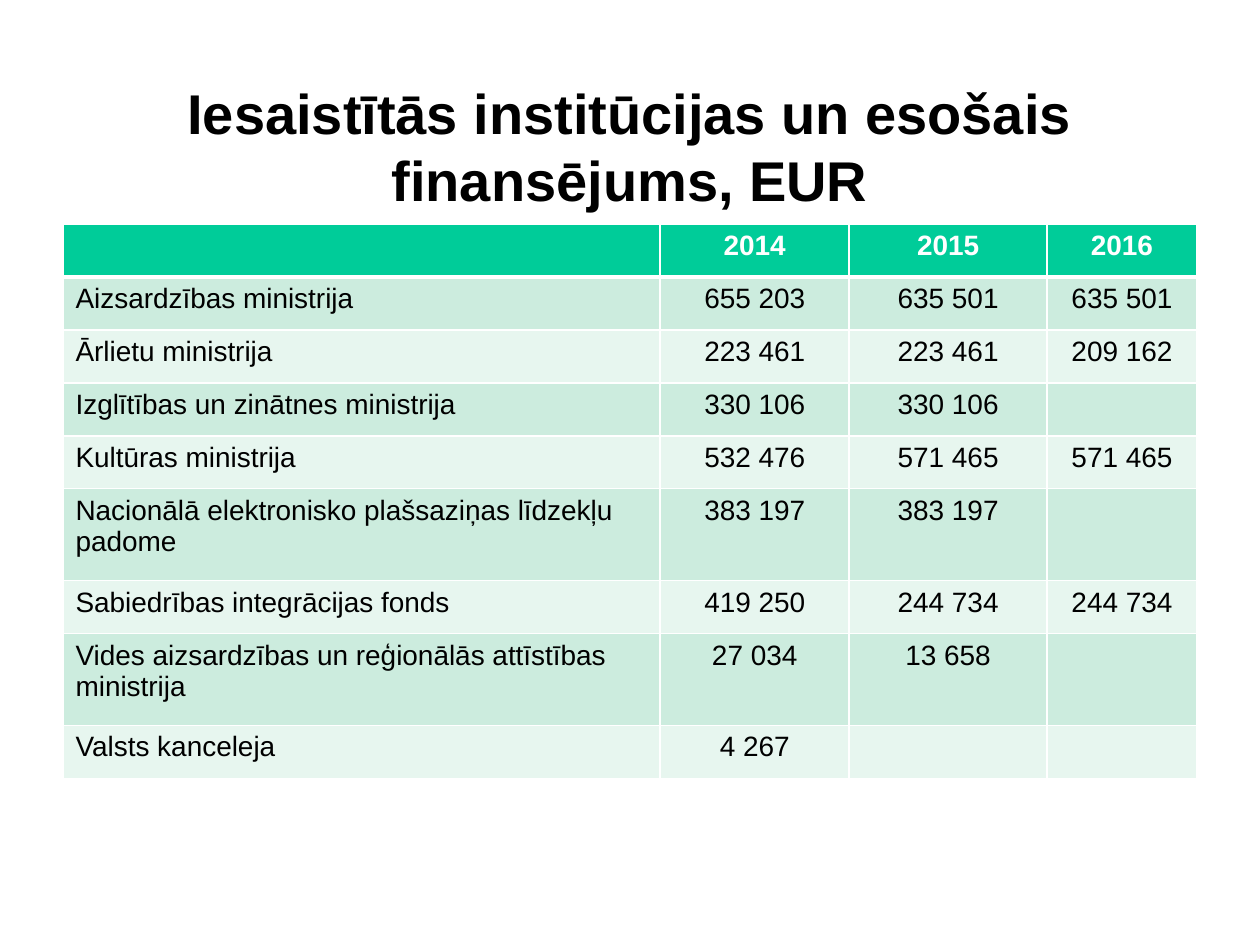
from lxml.etree import SubElement
from pptx import Presentation
from pptx.dml.color import RGBColor
from pptx.enum.text import MSO_ANCHOR, MSO_AUTO_SIZE, PP_ALIGN
from pptx.oxml.ns import qn
from pptx.util import Inches, Pt

TITLE = "Iesaistītās institūcijas un esošais finansējums, EUR"
HEADER = ("", "2014", "2015", "2016")
FUNDING = [
    ("Aizsardzības ministrija", "655 203", "635 501", "635 501"),
    ("Ārlietu ministrija", "223 461", "223 461", "209 162"),
    ("Izglītības un zinātnes ministrija", "330 106", "330 106", ""),
    ("Kultūras ministrija", "532 476", "571 465", "571 465"),
    ("Nacionālā elektronisko plašsaziņas līdzekļu padome", "383 197", "383 197", ""),
    ("Sabiedrības integrācijas fonds", "419 250", "244 734", "244 734"),
    ("Vides aizsardzības un reģionālās attīstības ministrija", "27 034", "13 658", ""),
    ("Valsts kanceleja", "4 267", "", ""),
]

FONT = "Arial"
BLACK, WHITE = "000000", "FFFFFF"
HEADER_FILL, BANDS = "00CC99", ("CCECDE", "E7F6EF")
MARGIN, CONTENT_WIDTH = 0.5, 9
TITLE_TOP, TITLE_HEIGHT, TABLE_TOP = 0.76, 0.79, 1.78
COLUMN_WIDTHS = (4.74, 1.5, 1.57, 1.19)
ROW_HEIGHT, TALL_ROW_HEIGHT = 0.42, 0.73
LONGEST_ONE_LINE_NAME = 40


def format_text(frame, size, color, bold, align):
    for paragraph in frame.paragraphs:
        paragraph.alignment = align
        for run in paragraph.runs:
            font = run.font
            font.name, font.size, font.bold = FONT, Pt(size), bold
            font.color.rgb = RGBColor.from_string(color)


def add_borders(cell, widths):
    """Draw white borders; widths are points for left, right, top, bottom."""
    properties = cell._tc.get_or_add_tcPr()
    for side, width in zip("LRTB", widths):
        line = SubElement(properties, qn(f"a:ln{side}"), w=str(Pt(width)))
        fill = SubElement(line, qn("a:solidFill"))
        SubElement(fill, qn("a:srgbClr"), val=WHITE)


def add_title(slide):
    title = slide.shapes.title
    title.left, title.top = Inches(MARGIN), Inches(TITLE_TOP)
    title.width, title.height = Inches(CONTENT_WIDTH), Inches(TITLE_HEIGHT)
    frame = title.text_frame
    frame.text = TITLE
    frame.word_wrap = True
    frame.auto_size = MSO_AUTO_SIZE.NONE
    frame.vertical_anchor = MSO_ANCHOR.MIDDLE
    format_text(frame, 32, BLACK, True, PP_ALIGN.CENTER)


def add_funding_table(slide):
    rows = [HEADER, *FUNDING]
    heights = [TALL_ROW_HEIGHT if len(row[0]) > LONGEST_ONE_LINE_NAME else ROW_HEIGHT
               for row in rows]
    table = slide.shapes.add_table(
        len(rows), len(HEADER), Inches(MARGIN), Inches(TABLE_TOP),
        Inches(CONTENT_WIDTH), Inches(sum(heights))).table
    for column, width in zip(table.columns, COLUMN_WIDTHS):
        column.width = Inches(width)

    for r, (row, height) in enumerate(zip(rows, heights)):
        table.rows[r].height = Inches(height)
        is_header = r == 0
        fill = HEADER_FILL if is_header else BANDS[(r - 1) % 2]
        for c, value in enumerate(row):
            cell = table.cell(r, c)
            add_borders(cell, (1, 1, 3 if r == 1 else 1, 3 if is_header else 1))
            cell.fill.solid()
            cell.fill.fore_color.rgb = RGBColor.from_string(fill)
            cell.text_frame.text = value
            format_text(cell.text_frame, 16, WHITE if is_header else BLACK, is_header,
                        PP_ALIGN.CENTER if c else PP_ALIGN.LEFT)


def main():
    deck = Presentation()
    deck.slide_width, deck.slide_height = Inches(10), Inches(7.5)
    slide = deck.slides.add_slide(deck.slide_layouts[5])
    add_title(slide)
    add_funding_table(slide)
    deck.save("out.pptx")


if __name__ == "__main__":
    main()
